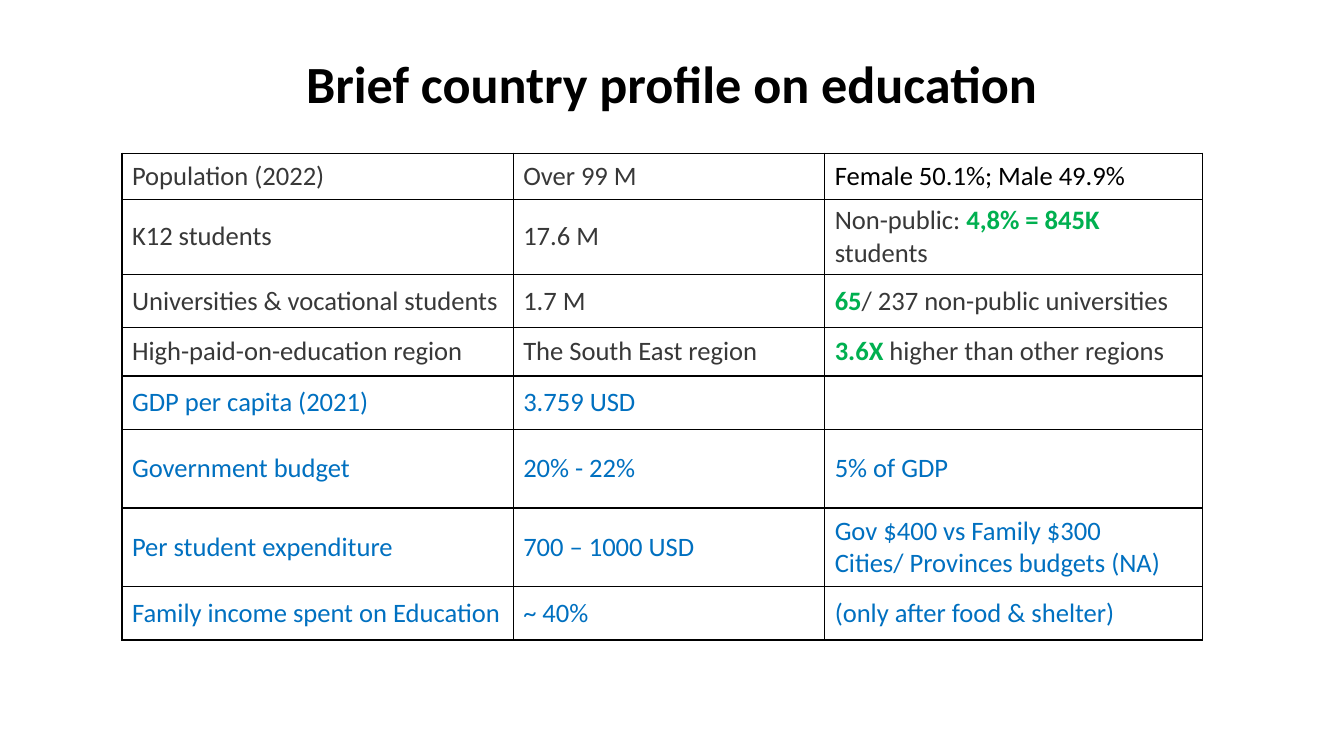
from pptx import Presentation
from pptx import util as u
from pptx.dml.color import RGBColor
from pptx.enum import text
from pptx.oxml import parse_xml
from pptx.oxml import ns

BLACK = RGBColor(0x00, 0x00, 0x00)
GRAY = RGBColor(0x38, 0x38, 0x38)
GREEN = RGBColor(0x00, 0xB0, 0x50)
BLUE = RGBColor(0x00, 0x70, 0xC0)
UNIT = u.Inches(0.01)
WIDE, HIGH = 1333, 750
COLS = [388, 309, 375]
ROWS = [
    (46, GRAY, ["Population (2022)", "Over 99 M", "Female 50.1%; Male 49.9%"]),
    (53, GRAY, ["K12 students", "17.6 M", "Non-public: *4,8% = 845K *students"]),
    (53, GRAY, ["Universities & vocational students", "1.7 M",
                "*65*/ 237 non-public universities"]),
    (48, GRAY, ["High-paid-on-education region", "The South East region",
                "*3.6X *higher than other regions"]),
    (53, BLUE, ["GDP per capita (2021)", "3.759 USD", ""]),
    (78, BLUE, ["Government budget", "20% - 22%", "5% of GDP"]),
    (78, BLUE, ["Per student expenditure", "700 – 1000 USD",
                "Gov $400 vs Family $300\nCities/ Provinces budgets (NA)"]),
    (53, BLUE, ["Family income spent on Education", "~ 40%",
                "(only after food & shelter)"]),
]


def style(font, color, **form):
    """Set a font's colour and its other format values."""
    font.color.rgb = color
    for key, val in form.items():
        setattr(font, key, val)


def border(cell):
    """Draw a thin black line on each side of a cell."""
    props = cell._tc.get_or_add_tcPr()
    for side in "LRTB":
        props.append(parse_xml(
            f'<a:ln{side} {ns.nsdecls("a")} w="12700"><a:solidFill>'
            f'<a:srgbClr val="{BLACK}"/></a:solidFill></a:ln{side}>'))


def write(cell, words, color):
    """Fill a cell, with the parts between stars in bold green."""
    border(cell)
    cell.fill.background()
    cell.vertical_anchor = text.MSO_ANCHOR.MIDDLE
    frame = cell.text_frame
    for num, line in enumerate(words.split("\n")):
        para = frame.add_paragraph() if num else frame.paragraphs[0]
        para.font.size = u.Pt(19)
        for pos, part in enumerate(line.split("*")):
            if part:
                run = para.add_run()
                run.text = part
                mark = pos % 2 == 1
                style(run.font, GREEN if mark else color, bold=mark,
                      size=u.Pt(19), name="Calibri")


def head(slide, box):
    """Place the slide title in its box."""
    title = slide.shapes.title
    for key, val in zip(("left", "top", "width", "height"), box):
        setattr(title, key, val * UNIT)
    frame = title.text_frame
    form = {"word_wrap": True, "vertical_anchor": text.MSO_ANCHOR.MIDDLE,
            "auto_size": text.MSO_AUTO_SIZE.NONE}
    form.update({f"margin_{side}": u.Inches(0.1)
                 for side in ("left", "right", "top", "bottom")})
    for key, val in form.items():
        setattr(frame, key, val)
    para = frame.paragraphs[0]
    para.alignment = text.PP_ALIGN.CENTER
    para.line_spacing = 0.9
    run = para.add_run()
    run.text = "Brief country profile on education"
    style(run.font, BLACK, name="Calibri", size=u.Pt(37.3), bold=True)


def facts(slide, left, top):
    """Place the table of facts with its corner at left and top."""
    tall = sum(row[0] for row in ROWS)
    size = [val * UNIT for val in (left, top, sum(COLS), tall)]
    table = slide.shapes.add_table(len(ROWS), len(COLS), *size).table
    table.first_row = table.horz_banding = False
    for col, wide in zip(table.columns, COLS):
        col.width = wide * UNIT
    for row, (high, color, cells) in zip(table.rows, ROWS):
        row.height = high * UNIT
        for cell, words in zip(row.cells, cells):
            write(cell, words, BLACK if words.startswith("Female") else color)


def main():
    """Build the slide and save it."""
    deck = Presentation()
    deck.slide_width, deck.slide_height = WIDE * UNIT, HIGH * UNIT
    slide = deck.slides.add_slide(deck.slide_layouts[5])
    head(slide, (283, 43, 767, 86))
    facts(slide, 121, 152)
    deck.save("out.pptx")


if __name__ == "__main__":
    main()
